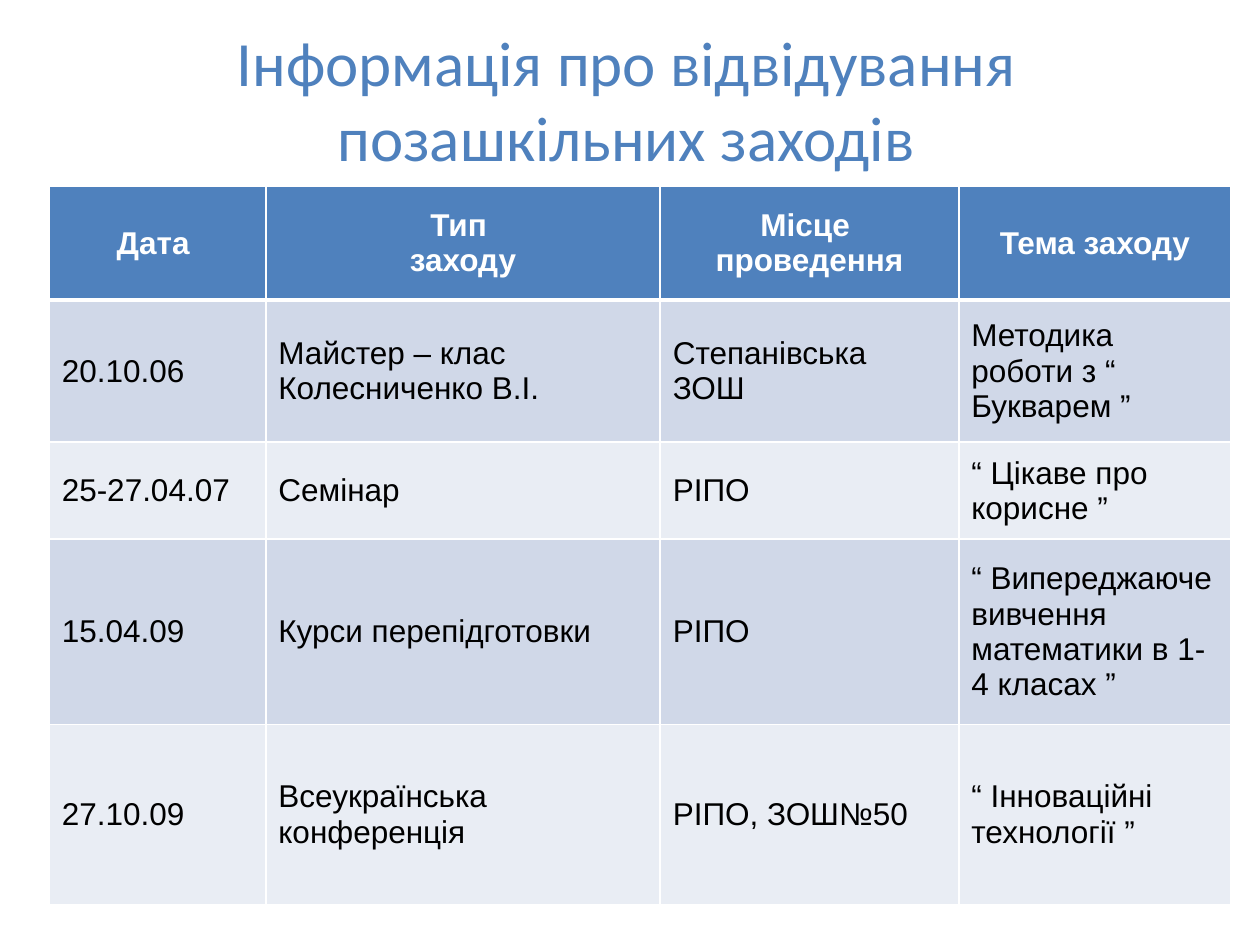
from lxml import etree
from pptx import Presentation
from pptx.dml.color import RGBColor
from pptx.enum import text
from pptx.oxml import ns
from pptx.util import Inches, Pt

BLUE = RGBColor(0x4F, 0x81, 0xBD)
DARK_BAND = RGBColor(0xD0, 0xD8, 0xE8)
LIGHT_BAND = RGBColor(0xE9, 0xED, 0xF4)
WHITE = RGBColor(0xFF, 0xFF, 0xFF)
BLACK = RGBColor(0, 0, 0)

COLUMN_WIDTHS = [1.72, 3.13, 2.37, 2.16]
ROW_HEIGHTS = [0.9, 1.13, 0.77, 1.47, 1.43]

# A line break inside a cell starts a new paragraph
EVENTS = [
    ["Дата ", "Тип \nзаходу", "Місце \nпроведення", "Тема заходу"],
    ["20.10.06", "Майстер – клас\nКолесниченко В.І.", "Степанівська ЗОШ",
     "Методика роботи з “ Букварем ”"],
    ["25-27.04.07", "Семінар", "РІПО", "“ Цікаве про корисне ”"],
    ["15.04.09", "Курси перепідготовки", "РІПО",
     "“ Випереджаюче вивчення математики в 1-4 класах ”"],
    ["27.10.09", "Всеукраїнська\nконференція", "РІПО, ЗОШ№50",
     "“ Інноваційні технології ”"],
]


def add_run(paragraph, wording, font, size, color, bold=False):
    run = paragraph.add_run()
    run.text = wording
    run.font.name = font
    run.font.size = Pt(size)
    run.font.bold = bold
    run.font.color.rgb = color


def set_border(cell, side, width, color):
    properties = cell._tc.get_or_add_tcPr()
    line = etree.SubElement(properties, ns.qn(f"a:ln{side}"), w=str(Pt(width)))
    fill = etree.SubElement(line, ns.qn("a:solidFill"))
    etree.SubElement(fill, ns.qn("a:srgbClr"), val=str(color))


def fill_title(slide, left, top, width, height):
    title = slide.shapes.title
    title.left, title.top, title.width, title.height = left, top, width, height
    frame = title.text_frame
    frame.word_wrap = True
    frame.auto_size = text.MSO_AUTO_SIZE.NONE
    frame.vertical_anchor = text.MSO_ANCHOR.MIDDLE
    paragraph = frame.paragraphs[0]
    paragraph.alignment = text.PP_ALIGN.CENTER
    add_run(paragraph, "Інформація про відвідування позашкільних заходів",
            "Calibri", 36, BLUE)


def format_cell(cell, wording, row_index):
    is_header = row_index == 0
    is_below_header = row_index == 1

    # Borders come before the fill in the cell properties
    set_border(cell, "L", 1, WHITE)
    set_border(cell, "R", 1, WHITE)
    set_border(cell, "T", 3 if is_below_header else 1, WHITE)
    set_border(cell, "B", 3 if is_header else 1, WHITE)
    band = DARK_BAND if row_index % 2 else LIGHT_BAND
    cell.fill.solid()
    cell.fill.fore_color.rgb = BLUE if is_header else band

    # Text
    cell.vertical_anchor = text.MSO_ANCHOR.MIDDLE
    frame = cell.text_frame
    for index, line in enumerate(wording.split("\n")):
        paragraph = frame.add_paragraph() if index else frame.paragraphs[0]
        paragraph.alignment = (text.PP_ALIGN.CENTER if is_header
                               else text.PP_ALIGN.LEFT)
        add_run(paragraph, line, "Arial", 18,
                WHITE if is_header else BLACK, is_header)


def add_events_table(slide, left, top, width, height):
    table = slide.shapes.add_table(len(EVENTS), len(COLUMN_WIDTHS),
                                   left, top, width, height).table
    for column, column_width in zip(table.columns, COLUMN_WIDTHS):
        column.width = Inches(column_width)
    for row_index, (row, row_height) in enumerate(zip(table.rows, ROW_HEIGHTS)):
        row.height = Inches(row_height)
        for cell, wording in zip(row.cells, EVENTS[row_index]):
            format_cell(cell, wording, row_index)


def main():
    presentation = Presentation()
    presentation.slide_width = Inches(10)
    presentation.slide_height = Inches(7.5)
    title_only = presentation.slide_layouts[5]
    slide = presentation.slides.add_slide(title_only)
    fill_title(slide, Inches(0.47), Inches(0.16), Inches(9), Inches(1.25))
    add_events_table(slide, Inches(0.39), Inches(1.48),
                     Inches(sum(COLUMN_WIDTHS)), Inches(sum(ROW_HEIGHTS)))
    presentation.save("out.pptx")


if __name__ == "__main__":
    main()
